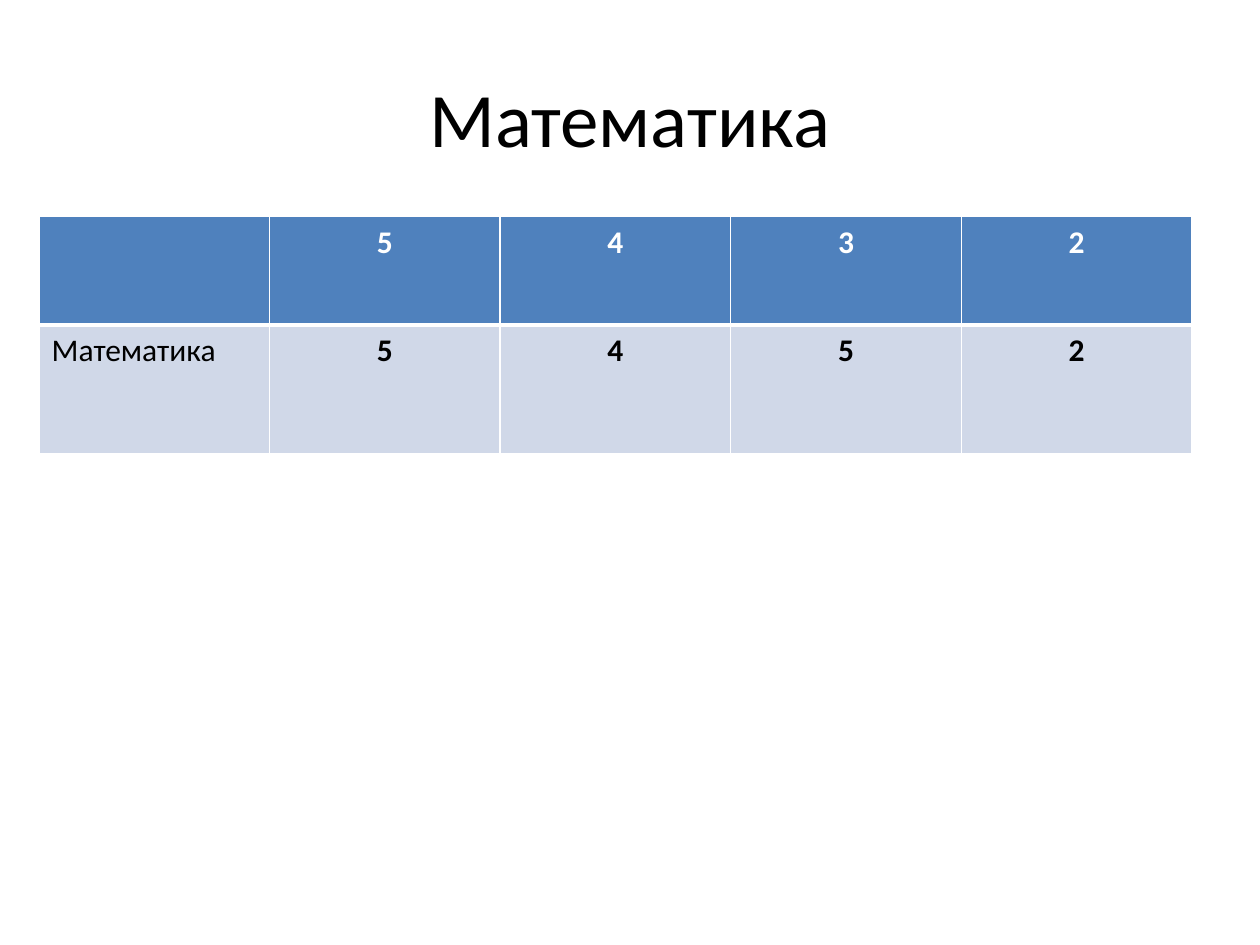
from lxml import etree
from pptx import Presentation
from pptx.dml.color import RGBColor
from pptx.enum.text import MSO_ANCHOR, PP_ALIGN
from pptx.oxml.ns import qn
from pptx.util import Inches, Pt

CENTER, LEFT = PP_ALIGN.CENTER, PP_ALIGN.LEFT
MIDDLE = MSO_ANCHOR.MIDDLE


def rgb(value):
    return RGBColor.from_string(value)


def add_text(p, text, size, color, bold, align):
    p.alignment = align
    r = p.add_run()
    r.text = text
    r.font.name = "Calibri"
    r.font.size = Pt(size)
    r.font.bold = bold
    r.font.color.rgb = rgb(color)


prs = Presentation()
prs.slide_width, prs.slide_height = Inches(10), Inches(7.5)
W, H = prs.slide_width, prs.slide_height
s = prs.slides.add_slide(prs.slide_layouts[6])

title = s.shapes.add_textbox(int(W * 0.05), int(H * 0.04), int(W * 0.9), Inches(1.25))
tf = title.text_frame
tf.word_wrap = True
tf.vertical_anchor = MIDDLE
add_text(tf.paragraphs[0], "Математика", 44, "000000", False, CENTER)

grades = [["", "5", "4", "3", "2"], ["Математика", "5", "4", "5", "2"]]
row_heights = [0.86, 1.02]
row_fills = ["4F81BD", "D0D8E8"]
row_colors = ["FFFFFF", "000000"]
row_borders = [{"L": 1, "R": 1, "T": 1, "B": 3}, {"L": 1, "R": 1, "T": 3, "B": 1}]
col_width = Inches(1.83)

table = s.shapes.add_table(
    2, 5, Inches(0.31), Inches(1.72), col_width * 5, Inches(sum(row_heights))
).table
for col in table.columns:
    col.width = col_width

for i, values in enumerate(grades):
    table.rows[i].height = Inches(row_heights[i])
    for j, value in enumerate(values):
        cell = table.cell(i, j)
        tcPr = cell._tc.get_or_add_tcPr()
        for side, width in row_borders[i].items():
            ln = etree.SubElement(tcPr, qn(f"a:ln{side}"), w=str(Pt(width)))
            fill = etree.SubElement(ln, qn("a:solidFill"))
            etree.SubElement(fill, qn("a:srgbClr"), val="FFFFFF")
        cell.fill.solid()
        cell.fill.fore_color.rgb = rgb(row_fills[i])
        if value:
            p = cell.text_frame.paragraphs[0]
            add_text(p, value, 18, row_colors[i], j > 0, CENTER if j else LEFT)

prs.save("out.pptx")
